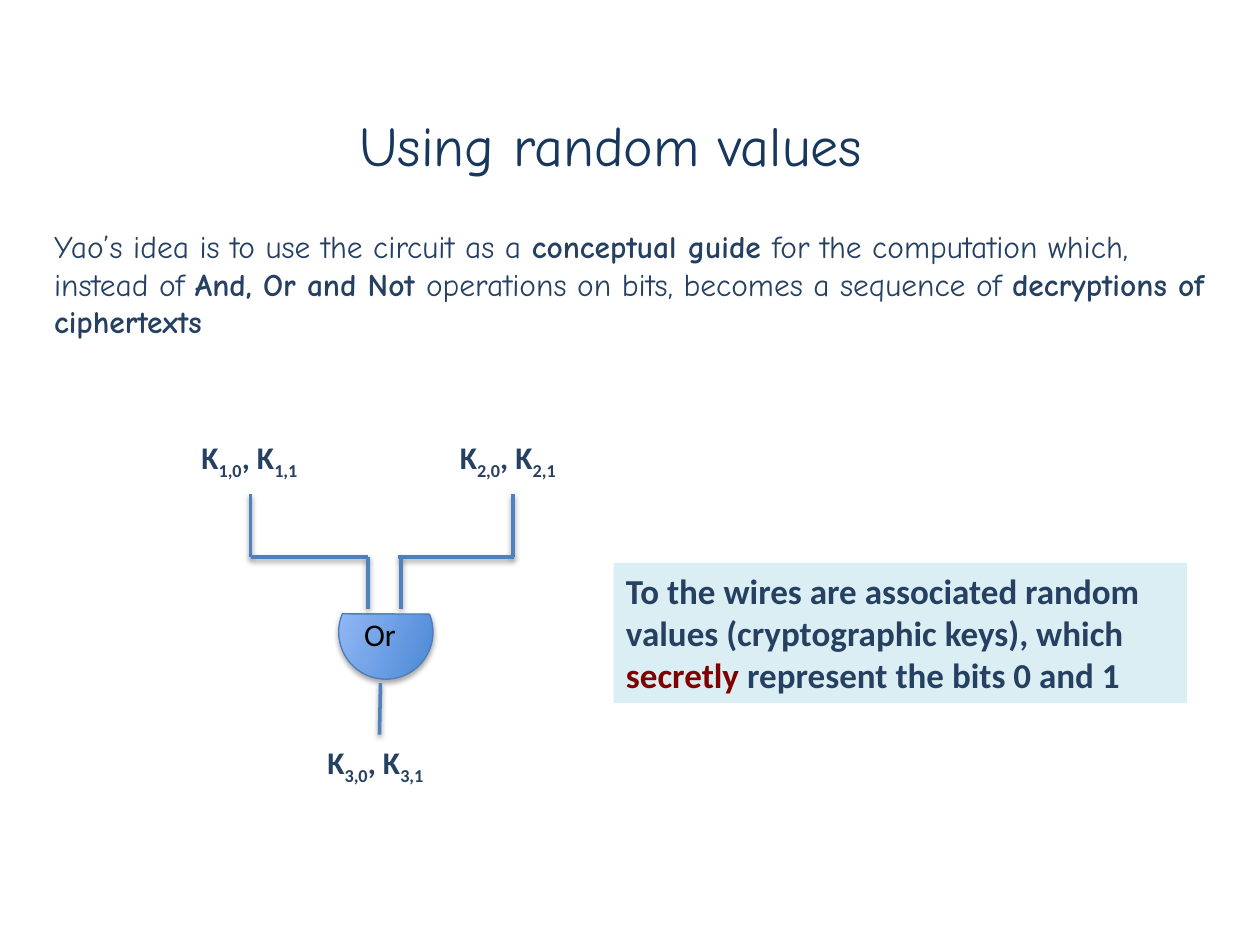
from dataclasses import dataclass
from typing import Optional

from lxml.etree import SubElement
from pptx import Presentation
from pptx.dml.color import RGBColor
from pptx.enum.shapes import MSO_CONNECTOR, MSO_SHAPE
from pptx.enum.text import MSO_ANCHOR, MSO_AUTO_SIZE, PP_ALIGN
from pptx.oxml.ns import qn
from pptx.util import Cm, Pt

COLORS = {
    "title": "17375E",
    "text": "254061",
    "secret": "800000",
    "note": "DBEEF4",
    "wire": "4F81BD",
    "gate_dark": "3F80CE",
    "gate_light": "A4C4FF",
    "gate_line": "4B7EBC",
    "black": "000000",
}


@dataclass
class Phrase:
    text: str
    bold: Optional[bool] = None
    color: Optional[str] = None
    subscript: bool = False


@dataclass
class Label:
    left: float
    top: float
    width: float
    height: float
    phrases: list[Phrase]
    size: int = 18
    font: str = "Calibri"
    color: str = "text"
    bold: bool = False
    wrap: bool = False
    fill: Optional[str] = None


@dataclass
class Wire:
    x1: float
    y1: float
    x2: float
    y2: float


def rgb(name: str) -> RGBColor:
    return RGBColor.from_string(COLORS[name])


def add_shadow(effects, opacity: int, distance: float) -> None:
    shadow = SubElement(effects, qn("a:outerShdw"), blurRad=str(Pt(3.1)),
                        dist=str(Pt(distance)), dir="5400000", rotWithShape="0")
    tone = SubElement(shadow, qn("a:srgbClr"), val=COLORS["black"])
    SubElement(tone, qn("a:alpha"), val=str(opacity * 1000))


def draw_label(slide, label: Label) -> None:
    place = [Cm(v) for v in (label.left, label.top, label.width, label.height)]
    if label.fill:
        box = slide.shapes.add_shape(MSO_SHAPE.RECTANGLE, *place)
        box.shadow.inherit = False
        box.fill.solid()
        box.fill.fore_color.rgb = rgb(label.fill)
        box.line.fill.background()
    else:
        box = slide.shapes.add_textbox(*place)
    frame = box.text_frame
    frame.word_wrap = label.wrap
    frame.auto_size = MSO_AUTO_SIZE.SHAPE_TO_FIT_TEXT
    frame.vertical_anchor = MSO_ANCHOR.TOP
    paragraph = frame.paragraphs[0]
    paragraph.alignment = PP_ALIGN.LEFT
    paragraph.font.size = Pt(label.size)
    paragraph.font.name = label.font
    paragraph.font.bold = label.bold
    paragraph.font.color.rgb = rgb(label.color)
    for phrase in label.phrases:
        run = paragraph.add_run()
        run.text = phrase.text
        if phrase.bold is not None:
            run.font.bold = phrase.bold
        if phrase.color:
            run.font.color.rgb = rgb(phrase.color)
        if phrase.subscript:
            run._r.get_or_add_rPr().set("baseline", "-25000")


def draw_wire(slide, wire: Wire) -> None:
    line = slide.shapes.add_connector(
        MSO_CONNECTOR.STRAIGHT, Cm(wire.x1), Cm(wire.y1), Cm(wire.x2), Cm(wire.y2))
    line.line.color.rgb = rgb("wire")
    line.line.width = Pt(2)
    add_shadow(SubElement(line._element.spPr, qn("a:effectLst")), 38, 1.6)


def draw_gate(slide, left: float, top: float, size: float) -> None:
    gate = slide.shapes.add_shape(MSO_SHAPE.CHORD, Cm(left), Cm(top), Cm(size), Cm(size))
    gate.rotation = 292.7
    gate.fill.gradient()
    gate.fill.gradient_angle = 90
    for stop, color in zip(gate.fill.gradient_stops, ("gate_dark", "gate_light")):
        stop.color.rgb = rgb(color)
    gate.line.color.rgb = rgb("gate_line")
    gate.line.width = Pt(0.75)
    gate.shadow.inherit = False
    add_shadow(gate._element.spPr.find(qn("a:effectLst")), 35, 1.8)


def key_pair(wire_number: int, left: float, top: float) -> Label:
    phrases = [Phrase("K"), Phrase(f"{wire_number},0", subscript=True),
               Phrase(", K"), Phrase(f"{wire_number},1", subscript=True)]
    return Label(left, top, 2.62, 1.02, phrases, bold=True)


TITLE = Label(6.99, 2.11, 11.23, 1.63, [Phrase("Using random values")],
              size=32, font="Comic Neue", color="title")
IDEA = Label(0.84, 4.45, 24.05, 2.57, [
    Phrase("Yao’s idea is to use the circuit as a "),
    Phrase("conceptual guide ", bold=True),
    Phrase("for the computation which, instead of "),
    Phrase("And, Or and Not ", bold=True),
    Phrase("operations on bits, becomes a sequence of "),
    Phrase("decryptions of ciphertexts", bold=True),
], font="Comic Neue", wrap=True)
NOTE = Label(12.37, 11.35, 11.56, 2.82, [
    Phrase("To the wires are associated random values (cryptographic keys), which "),
    Phrase("secretly ", color="secret"),
    Phrase("represent the bits 0 and 1"),
], size=20, bold=True, wrap=True, fill="note")
KEYS = [key_pair(1, 3.81, 8.71), key_pair(2, 9.02, 8.71), key_pair(3, 6.35, 14.86)]
GATE_NAME = Label(7.09, 12.27, 1.17, 1.02, [Phrase("Or")], color="black")

KEY_Y, BEND_Y, GATE_Y = 9.96, 11.23, 12.27
WIRES = [
    Wire(5.05, KEY_Y, 5.05, BEND_Y),
    Wire(5.05, BEND_Y, 7.42, BEND_Y),
    Wire(7.42, BEND_Y, 7.42, GATE_Y),
    Wire(10.34, KEY_Y, 10.34, BEND_Y),
    Wire(8.03, BEND_Y, 10.36, BEND_Y),
    Wire(8.08, BEND_Y, 8.08, GATE_Y),
    Wire(7.67, 13.77, 7.65, 14.81),
]


def main() -> None:
    presentation = Presentation()
    presentation.slide_width = Cm(25.4)
    presentation.slide_height = Cm(19.05)
    slide = presentation.slides.add_slide(presentation.slide_layouts[6])
    for label in (TITLE, NOTE, *KEYS):
        draw_label(slide, label)
    draw_gate(slide, 6.83, 11.79, 1.9)
    for wire in WIRES:
        draw_wire(slide, wire)
    for label in (GATE_NAME, IDEA):
        draw_label(slide, label)
    presentation.save("out.pptx")


if __name__ == "__main__":
    main()
